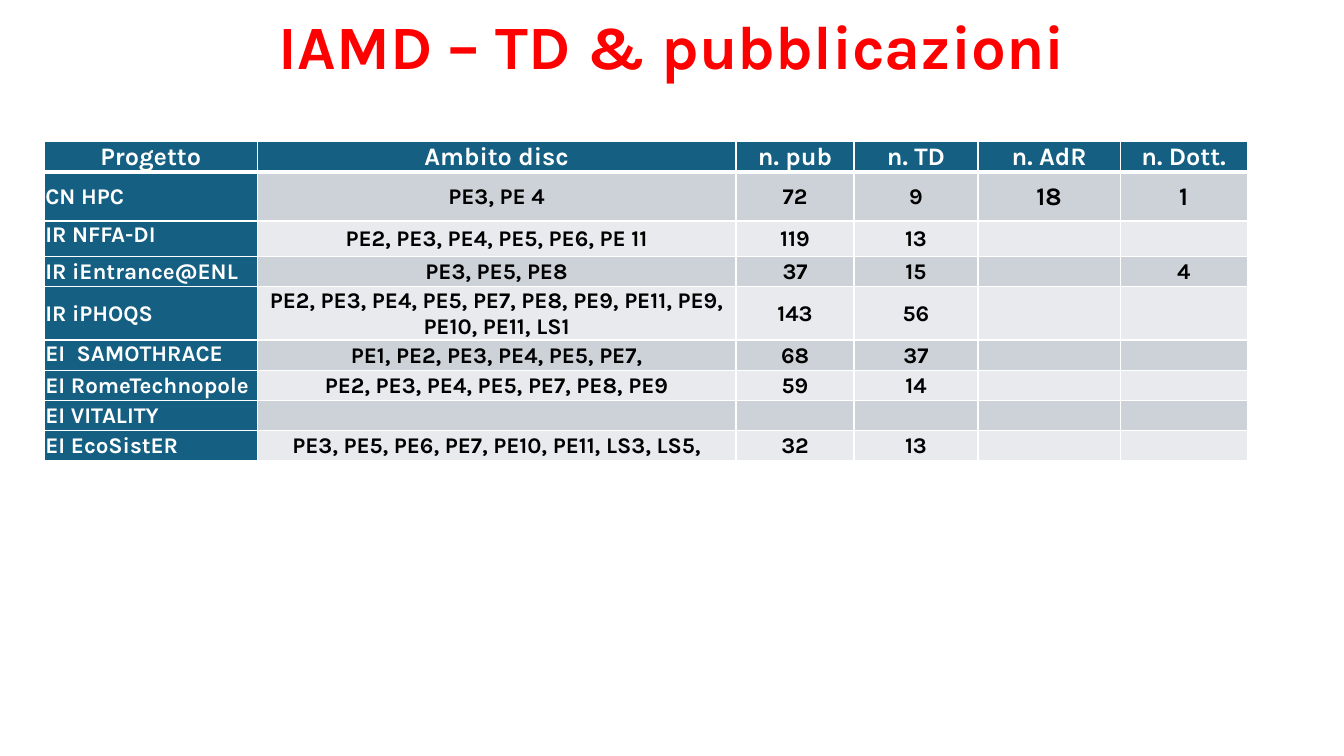
from lxml import etree
from pptx import Presentation
from pptx.dml.color import RGBColor
from pptx.enum.text import MSO_ANCHOR as Anchor, PP_ALIGN as Align
from pptx.oxml.ns import qn
from pptx.util import Inches, Pt

FONT = "Karla"
COLORS = {
    "title": "FF0000",
    "heading": "156082",
    "odd_row": "CCD2D8",
    "even_row": "E8EAED",
    "white": "FFFFFF",
    "black": "000000",
}
HEADERS = ["Progetto", "Ambito disc", "n. pub", "n. TD", "n. AdR", "n. Dott."]
PROJECTS = [
    ["CN HPC", "PE3, PE 4", "72", "9", "18", "1"],
    ["IR NFFA-DI", "PE2, PE3, PE4, PE5, PE6, PE 11", "119", "13", "", ""],
    ["IR iEntrance@ENL", "PE3, PE5, PE8", "37", "15", "", "4"],
    ["IR iPHOQS", "PE2, PE3, PE4, PE5, PE7, PE8, PE9, PE11, PE9, PE10, PE11, LS1",
     "143", "56", "", ""],
    ["EI  SAMOTHRACE", "PE1, PE2, PE3, PE4, PE5, PE7,", "68", "37", "", ""],
    ["EI RomeTechnopole", "PE2, PE3, PE4, PE5, PE7, PE8, PE9", "59", "14", "", ""],
    ["EI VITALITY", "", "", "", "", ""],
    ["EI EcoSistER", "PE3, PE5, PE6, PE7, PE10, PE11, LS3, LS5,", "32", "13", "", ""],
]
COLUMN_WIDTHS = [2.11, 4.75, 1.17, 1.23, 1.41, 1.26]
ROW_HEIGHTS = [0.3, 0.49, 0.35] + [0.3] * 6
TOP_ANCHORED = {(2, 0), (5, 0)}
LARGE_COUNTS = {(1, 4), (1, 5)}
CELL_MARGINS = {
    "margin_left": Inches(0.01),
    "margin_right": Inches(0.01),
    "margin_top": Inches(0.01),
    "margin_bottom": 0,
}


def write_text(paragraph, text, size, color, align):
    paragraph.alignment = align
    run = paragraph.add_run()
    run.text = text
    for name, value in {"name": FONT, "size": Pt(size), "bold": True}.items():
        setattr(run.font, name, value)
    run.font.color.rgb = RGBColor.from_string(COLORS[color])


def add_borders(cell, row_index):
    """Draw white cell borders, thicker between the header and the body."""
    widths = {
        "a:lnL": 1,
        "a:lnR": 1,
        "a:lnT": 3 if row_index == 1 else 1,
        "a:lnB": 3 if row_index == 0 else 1,
    }
    properties = cell._tc.get_or_add_tcPr()
    for tag, width in widths.items():
        line = etree.SubElement(properties, qn(tag), w=str(Pt(width)))
        fill = etree.SubElement(line, qn("a:solidFill"))
        etree.SubElement(fill, qn("a:srgbClr"), val=COLORS["white"])


presentation = Presentation()
presentation.slide_width = Inches(13.33)
presentation.slide_height = Inches(7.5)
slide = presentation.slides.add_slide(presentation.slide_layouts[5])

title = slide.shapes.title
title.left, title.top = Inches(0.92), Inches(0.1)
title.width, title.height = Inches(11.5), Inches(0.78)
title.text_frame.vertical_anchor = Anchor.MIDDLE
title_paragraph = title.text_frame.paragraphs[0]
title_paragraph.line_spacing = 0.9
write_text(title_paragraph, "IAMD – TD & pubblicazioni", 44, "title", Align.CENTER)

rows = [HEADERS] + PROJECTS
table = slide.shapes.add_table(
    len(rows), len(HEADERS), Inches(0.44), Inches(1.4),
    Inches(sum(COLUMN_WIDTHS)), Inches(sum(ROW_HEIGHTS)),
).table
table.first_col = True
for column, width in zip(table.columns, COLUMN_WIDTHS):
    column.width = Inches(width)
for row, height in zip(table.rows, ROW_HEIGHTS):
    row.height = Inches(height)

for row_index, texts in enumerate(rows):
    for column_index, text in enumerate(texts):
        position = (row_index, column_index)
        is_header = row_index == 0
        is_heading = is_header or column_index == 0
        cell = table.cell(*position)
        for name, value in CELL_MARGINS.items():
            setattr(cell, name, value)
        cell.vertical_anchor = Anchor.TOP if position in TOP_ANCHORED else Anchor.MIDDLE
        add_borders(cell, row_index)

        band = "odd_row" if row_index % 2 else "even_row"
        cell.fill.solid()
        cell.fill.fore_color.rgb = RGBColor.from_string(
            COLORS["heading" if is_heading else band])

        size = 18 if is_header or position in LARGE_COUNTS else 16
        align = Align.LEFT if column_index == 0 and not is_header else Align.CENTER
        write_text(cell.text_frame.paragraphs[0], text, size,
                   "white" if is_heading else "black", align)

presentation.save("out.pptx")
